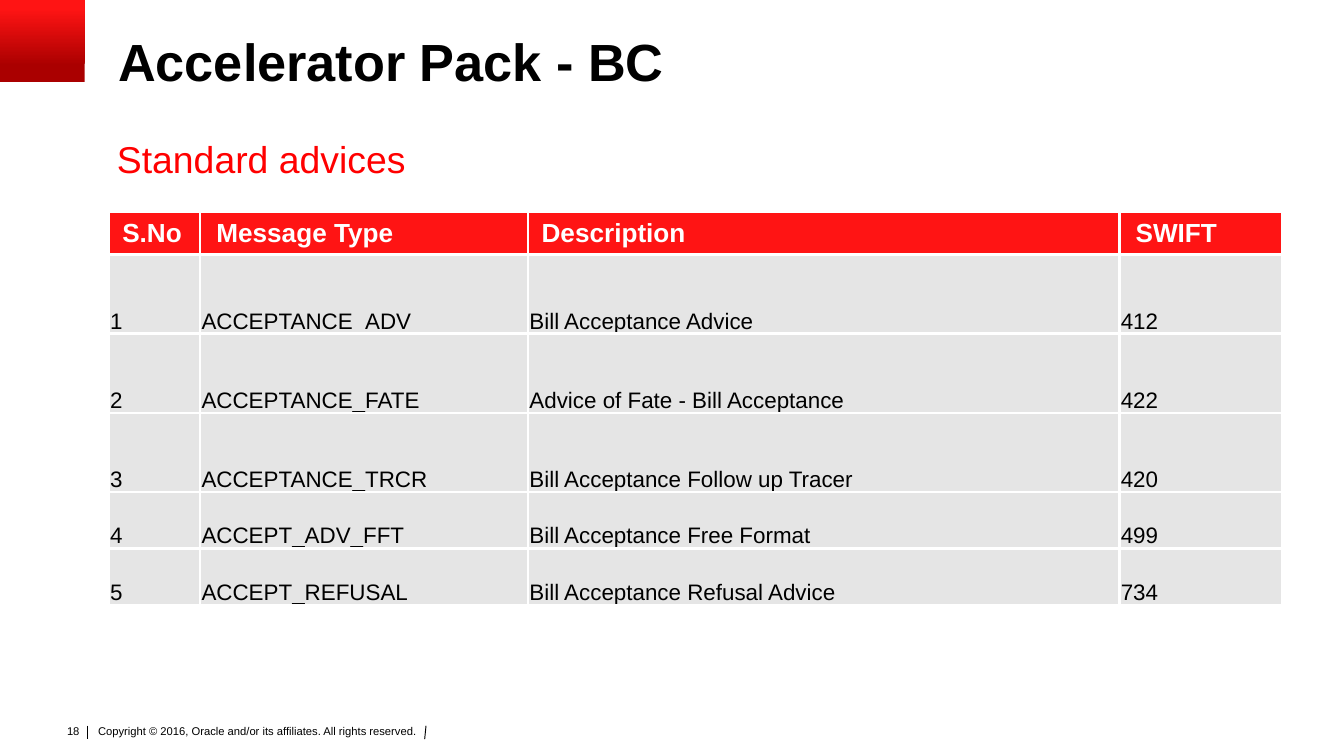
from lxml import etree
from pptx import Presentation
from pptx import util as u
from pptx.dml.color import RGBColor
from pptx.enum import shapes, text
from pptx.oxml import ns

COLORS = {
    "black": "000000",
    "white": "FFFFFF",
    "red": "FF0000",
    "header": "FF1414",
    "dark_red": "AA0000",
    "row": "E5E5E5",
}
FONT = "Arial"
HEADERS = ["S.No", "Message Type", "Description", "SWIFT"]
ADVICES = [
    ["1", "ACCEPTANCE_ADV", "Bill Acceptance Advice", "412"],
    ["2", "ACCEPTANCE_FATE", "Advice of Fate - Bill Acceptance", "422"],
    ["3", "ACCEPTANCE_TRCR", "Bill Acceptance Follow up Tracer", "420"],
    ["4", "ACCEPT_ADV_FFT", "Bill Acceptance Free Format", "499"],
    ["5", "ACCEPT_REFUSAL", "Bill Acceptance Refusal Advice", "734"],
]
COLUMN_WIDTHS = [0.68, 2.44, 4.4, 1.21]
ROW_HEIGHTS = [0.31, 0.59, 0.59, 0.59, 0.42, 0.42]


def rgb(name):
    """Return the named colour."""
    return RGBColor.from_string(COLORS[name])


def write(paragraph, words, size, color="black", bold=False, align=None, spacing=None):
    """Put formatted text into a paragraph."""
    run = paragraph.add_run()
    run.text = words
    run.font.name = FONT
    run.font.size = u.Pt(size)
    run.font.bold = bold
    run.font.color.rgb = rgb(color)
    paragraph.alignment = align
    paragraph.line_spacing = spacing


def set_margins(target, left, top, right, bottom):
    """Set the inner margins of a text frame or table cell."""
    target.margin_left = u.Inches(left)
    target.margin_top = u.Inches(top)
    target.margin_right = u.Inches(right)
    target.margin_bottom = u.Inches(bottom)


def add_text(slide, box, words, size, margins=(0, 0, 0, 0), wrap=True, **style):
    """Add a text box with one paragraph."""
    frame = slide.shapes.add_textbox(*map(u.Inches, box)).text_frame
    frame.word_wrap = wrap
    set_margins(frame, *margins)
    write(frame.paragraphs[0], words, size, **style)


def add_corner(slide):
    """Add the gradient block in the top left corner."""
    corner = slide.shapes.add_shape(
        shapes.MSO_SHAPE.RECTANGLE, 0, 0, u.Inches(0.63), u.Inches(0.61))
    corner.shadow.inherit = False
    corner.line.fill.background()
    corner.fill.gradient()
    corner.fill.gradient_angle = 90
    stops = [(0.2, "dark_red"), (0.9, "header")]
    for stop, (position, color) in zip(corner.fill.gradient_stops, stops):
        stop.position = position
        stop.color.rgb = rgb(color)


def add_divider(slide, top_x, bottom_x):
    """Add a short upright line in the footer."""
    line = slide.shapes.add_connector(
        shapes.MSO_CONNECTOR.STRAIGHT,
        u.Inches(top_x), u.Inches(5.4), u.Inches(bottom_x), u.Inches(5.5))
    line.line.color.rgb = rgb("black")
    line.line.width = u.Pt(0.5)
    etree.SubElement(line._element.spPr, ns.qn("a:effectLst"))


def set_borders(cell, sides):
    """Draw white borders on the given sides of a cell."""
    properties = cell._tc.get_or_add_tcPr()
    for index, side in enumerate(sides):
        border = etree.Element(ns.qn(f"a:ln{side}"), w=str(u.Pt(1.5)))
        fill = etree.SubElement(border, ns.qn("a:solidFill"))
        etree.SubElement(fill, ns.qn("a:srgbClr"), val=COLORS["white"])
        properties.insert(index, border)


def fill_cell(cell, words, is_header, indent):
    """Format one table cell and write its text."""
    cell.fill.solid()
    cell.fill.fore_color.rgb = rgb("header" if is_header else "row")
    paragraph = cell.text_frame.paragraphs[0]
    if is_header:
        set_margins(cell, 0.1 + indent, 0.04, 0.1, 0.04)
        cell.vertical_anchor = text.MSO_ANCHOR.MIDDLE
        write(paragraph, words, 14, color="white", bold=True)
    else:
        set_margins(cell, 0.01, 0.01, 0.01, 0)
        cell.vertical_anchor = text.MSO_ANCHOR.BOTTOM
        write(paragraph, words, 12)


def add_advice_table(slide):
    """Add the table of standard advices."""
    rows = [HEADERS] + ADVICES
    table = slide.shapes.add_table(
        len(rows), len(HEADERS), u.Inches(0.81), u.Inches(1.58),
        u.Inches(sum(COLUMN_WIDTHS)), u.Inches(sum(ROW_HEIGHTS))).table
    table.horz_banding = False
    for column, width in zip(table.columns, COLUMN_WIDTHS):
        column.width = u.Inches(width)
    for row, height in zip(table.rows, ROW_HEIGHTS):
        row.height = u.Inches(height)
    for row_index, row in enumerate(rows):
        for column_index, words in enumerate(row):
            cell = table.cell(row_index, column_index)
            fill_cell(cell, words, row_index == 0, 0.02 * (column_index % 2))
            left = "L" if column_index > 0 else ""
            right = "R" if column_index < len(row) - 1 else ""
            top = "T" if row_index > 0 else ""
            set_borders(cell, left + right + top + "B")


def add_footer(slide):
    """Add the copyright line, dividers and page number."""
    add_text(slide, (0.69, 5.37, 2.74, 0.24),
             "Copyright © 2016, Oracle and/or its affiliates. All rights reserved.",
             6, margins=(0.04, 0.02, 0.04, 0.02))
    add_divider(slide, 0.65, 0.65)
    add_divider(slide, 3.17, 3.16)
    add_text(slide, (0.39, 5.34, 0.3, 0.2), "18", 6,
             margins=(0.1, 0.05, 0.1, 0.05), wrap=False, align=text.PP_ALIGN.RIGHT)


def main():
    """Build and save the slide."""
    presentation = Presentation()
    presentation.slide_width = u.Inches(10)
    presentation.slide_height = u.Inches(5.625)
    slide = presentation.slides.add_slide(presentation.slide_layouts[6])
    add_footer(slide)
    add_corner(slide)
    add_text(slide, (0.87, 1.01, 9, 0.33), "Standard advices", 20, color="red")
    add_text(slide, (0.88, 0.27, 8.5, 0.83), "Accelerator Pack - BC", 28,
             bold=True, spacing=0.9)
    add_advice_table(slide)
    presentation.save("out.pptx")


if __name__ == "__main__":
    main()
